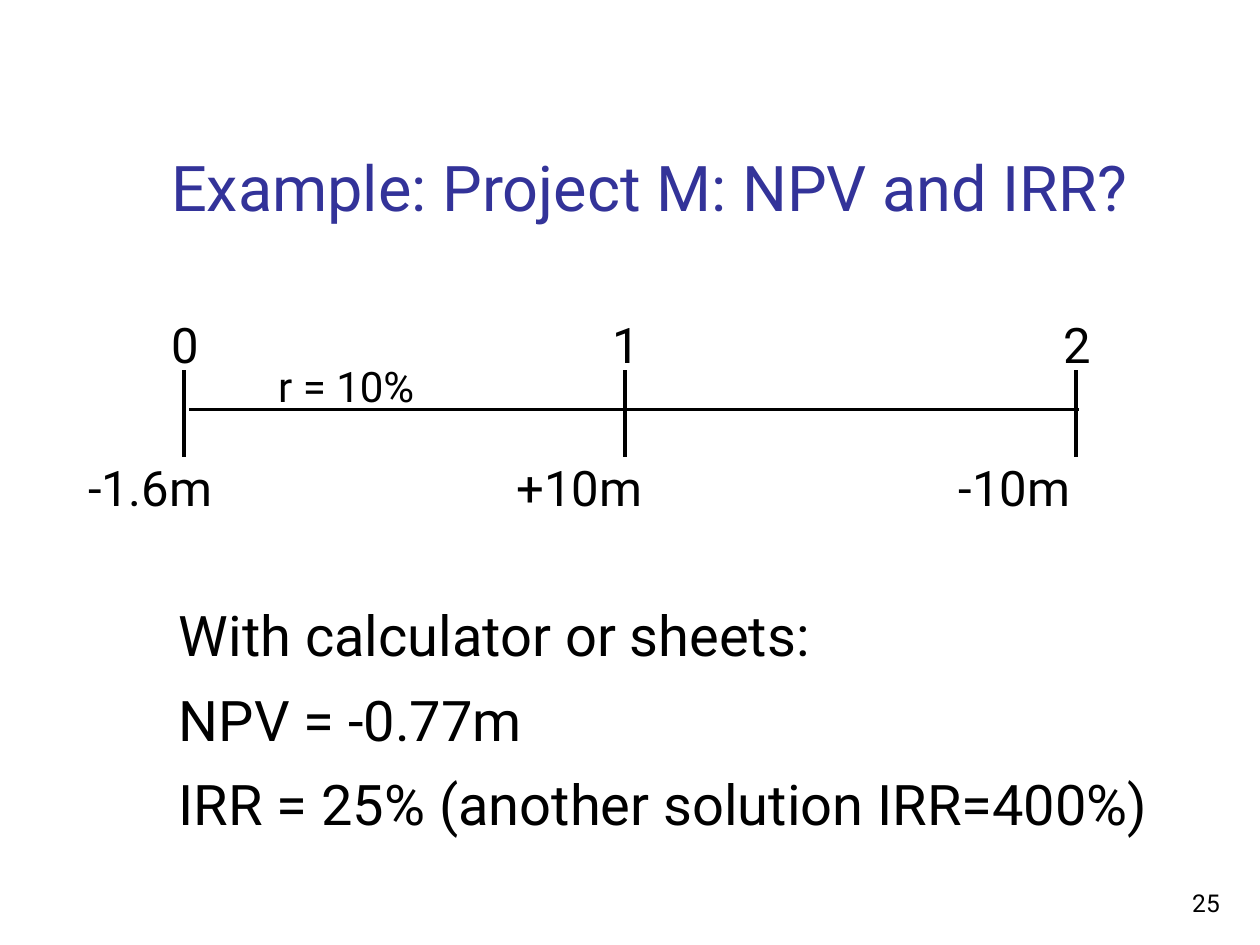
from lxml.etree import SubElement
from pptx import Presentation
from pptx.dml.color import RGBColor
from pptx.enum.shapes import MSO_CONNECTOR as Connector
from pptx.enum.text import MSO_ANCHOR as Anchor, MSO_AUTO_SIZE as AutoSize, PP_ALIGN as Align
from pptx.oxml.ns import qn
from pptx.util import Inches, Pt

WIDTH, HEIGHT = 10, 7.5
BLACK = RGBColor(0x00, 0x00, 0x00)
TITLE_BLUE = RGBColor(0x33, 0x33, 0x99)
FONT = "Roboto"

AXIS_Y, TICK_TOP, TICK_BOTTOM = 3.25, 2.94, 3.63
PERIOD_TOP, CASH_FLOW_TOP = 2.45, 3.58
# tick position, period, cash flow, left edge and width of the cash flow
PERIODS = [
    (1.46, "0", "-1.6m", 0.6, 1.22),
    (4.96, "1", "+10m", 4.0, 1.24),
    (8.54, "2", "-10m", 7.51, 1.1),
]
RESULT_LEFT, RESULT_TOP, RESULT_PITCH = 1.32, 4.72, 0.67
RESULTS = [
    ("With calculator or sheets:", 5.49),
    ("NPV = -0.77m", 3.02),
    ("IRR = 25% (another solution IRR=400%)", 8.52),
]


def add_text(slide, text, left, top, width, height, *, size, color=BLACK,
             align=Align.LEFT, anchor=Anchor.TOP, wrap=False):
    shape = slide.shapes.add_textbox(*map(Inches, (left, top, width, height)))
    frame = shape.text_frame
    frame.word_wrap = wrap
    frame.auto_size = AutoSize.NONE if wrap else AutoSize.SHAPE_TO_FIT_TEXT
    frame.vertical_anchor = anchor
    paragraph = frame.paragraphs[0]
    paragraph.alignment = align
    run = paragraph.add_run()
    run.text = text
    run.font.name = FONT
    run.font.size = Pt(size)
    run.font.color.rgb = color


def add_line(slide, x1, y1, x2, y2):
    line = slide.shapes.add_connector(Connector.STRAIGHT, *map(Inches, (x1, y1, x2, y2)))
    line.line.color.rgb = BLACK
    line.line.width = Pt(2)
    SubElement(line._element.spPr, qn("a:effectLst"))


def add_timeline(slide):
    add_line(slide, 1.5, AXIS_Y, 8.56, AXIS_Y)
    for x, period, cash_flow, left, width in PERIODS:
        add_line(slide, x, TICK_TOP, x, TICK_BOTTOM)
        add_text(slide, period, x - 0.2, PERIOD_TOP, 0.41, 0.56, size=28)
        add_text(slide, cash_flow, left, CASH_FLOW_TOP, width, 0.57, size=28)
    add_text(slide, "r = 10%", 2.11, 2.81, 1.46, 0.5, size=24)


def add_results(slide):
    for row, (text, width) in enumerate(RESULTS):
        add_text(slide, text, RESULT_LEFT, RESULT_TOP + row * RESULT_PITCH, width, 0.64, size=32)


def main():
    presentation = Presentation()
    presentation.slide_width, presentation.slide_height = Inches(WIDTH), Inches(HEIGHT)
    slide = presentation.slides.add_slide(presentation.slide_layouts[6])
    add_text(slide, "Example: Project M: NPV and IRR?", 1.26, 0.23, 8.52, 1.6,
             size=36, color=TITLE_BLUE, anchor=Anchor.BOTTOM, wrap=True)
    add_timeline(slide)
    add_results(slide)
    add_text(slide, "25", 7.7, 6.83, 2.08, 0.5, size=14,
             align=Align.RIGHT, anchor=Anchor.BOTTOM, wrap=True)
    presentation.save("out.pptx")


if __name__ == "__main__":
    main()
